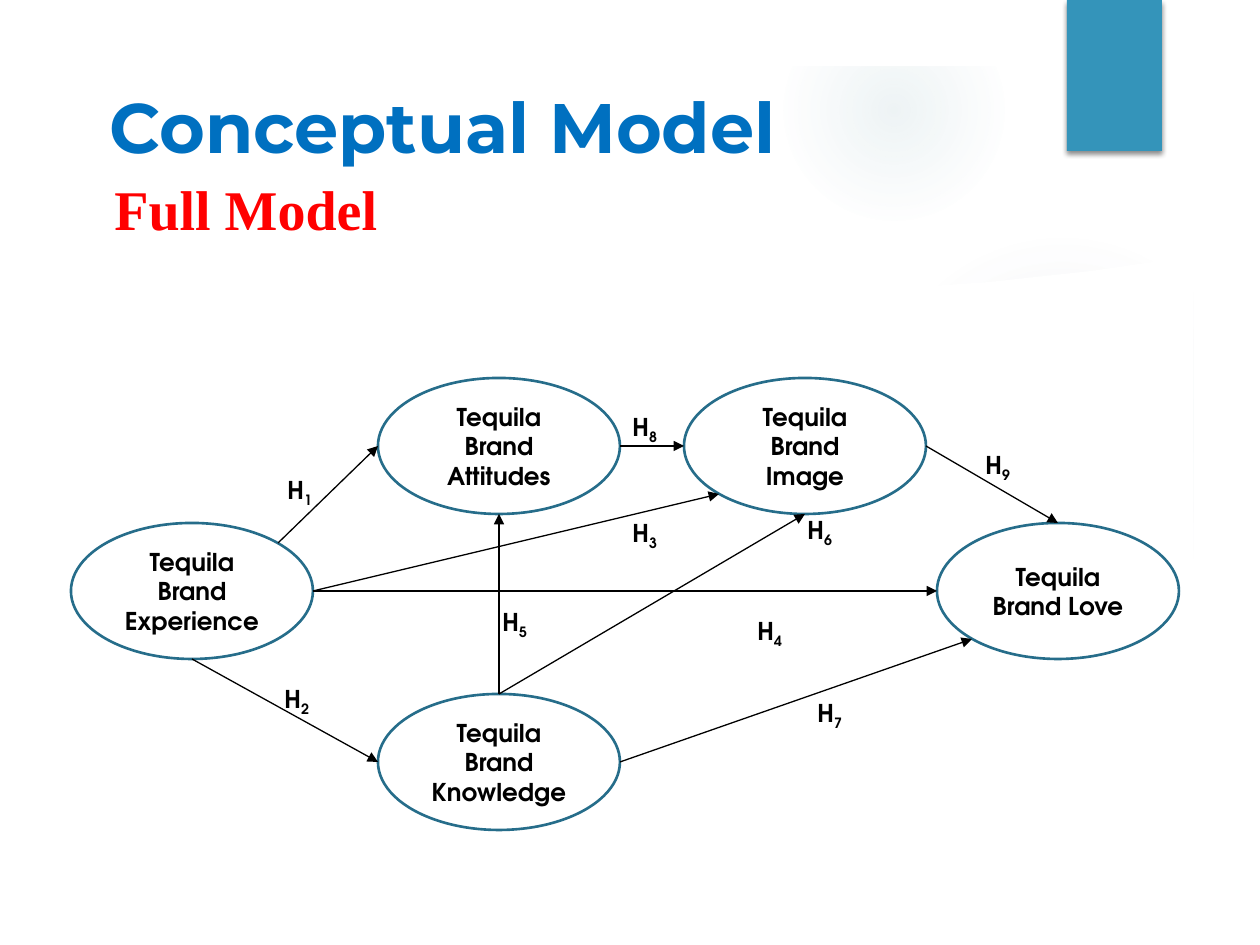
import math

from lxml import etree
from pptx import Presentation
from pptx import util as u
from pptx.dml.color import RGBColor
from pptx.enum import shapes, text
from pptx.oxml import parse_xml
from pptx.oxml.ns import nsdecls, qn

SCALE = 914400 / 126
COLORS = {
    "white": "FFFFFF", "black": "000000", "accent": "3494BA", "outline": "266D8A",
    "glow": "84ACB6", "title": "0070C0", "subtitle": "FF0000",
}
BODY_FONT = "TeX Gyre Adventor"
NODE_SIZE = (242, 136)
LABEL_SIZE = (82, 43)

NODES = {
    "Experience": (71, 523),
    "Love": (937, 523),
    "Image": (684, 378),
    "Attitudes": (378, 378),
    "Knowledge": (378, 694),
}
ANGLES = {"right": 0, "bottom": 90, "bottom left": 135, "left": 180, "top": 270, "top right": 315}

# hypothesis number: start node, start side, end node, end side, label position
PATHS = {
    1: ("Experience", "top right", "Attitudes", "left", (275, 470)),
    2: ("Experience", "bottom", "Knowledge", "left", (272, 679)),
    3: ("Experience", "right", "Image", "bottom left", (620, 513)),
    4: ("Experience", "right", "Love", "left", (745, 611)),
    5: ("Knowledge", "top", "Attitudes", "bottom", (490, 602)),
    6: ("Knowledge", "top", "Image", "bottom", (795, 510)),
    7: ("Knowledge", "right", "Love", "bottom left", (805, 693)),
    8: ("Attitudes", "right", "Image", "left", (620, 407)),
    9: ("Image", "right", "Love", "top", (973, 445)),
}
PANEL_TOP = [(67, 256), (218, 273), (349, 285), (467, 291), (644, 295), (787, 294),
             (887, 289), (989, 282), (1091, 271), (1193, 256)]
PANEL_BOTTOM = [(1193, 881), (67, 881)]


def px(length):
    return u.Emu(round(length * SCALE))


def color(name):
    return RGBColor.from_string(COLORS[name])


def edge_point(node, side):
    """Point of a node's ellipse on the named side."""
    left, top = NODES[node]
    width, height = NODE_SIZE
    angle = math.radians(ANGLES[side])
    return (round(left + width / 2 * (1 + math.cos(angle))),
            round(top + height / 2 * (1 + math.sin(angle))))


class Deck:
    def __init__(self, width, height):
        self.presentation = Presentation()
        self.presentation.slide_width = px(width)
        self.presentation.slide_height = px(height)
        self.slide = self.presentation.slides.add_slide(self.presentation.slide_layouts[6])

    def format_runs(self, paragraph, size, font=BODY_FONT, ink="black"):
        for run in paragraph.runs:
            run.font.size = u.Pt(size)
            run.font.name = font
            run.font.bold = True
            run.font.color.rgb = color(ink)

    def paint(self, shape, fill=None, line=None):
        shape.shadow.inherit = False
        if fill:
            shape.fill.solid()
            shape.fill.fore_color.rgb = color(fill)
        else:
            shape.fill.background()
        if line:
            shape.line.color.rgb = color(line)
            shape.line.width = u.Pt(1.5)
        else:
            shape.line.fill.background()

    def shape(self, kind, left, top, width, height, fill=None, line=None):
        shape = self.slide.shapes.add_shape(kind, px(left), px(top), px(width), px(height))
        self.paint(shape, fill, line)
        return shape

    def glow(self, left, top, size, stops):
        """Circle that fades outwards; stops are (position, opacity) in percent."""
        shape = self.shape(shapes.MSO_SHAPE.OVAL, left, top, size, size)
        stop_xml = "".join(
            f'<a:gs pos="{position * 1000}"><a:srgbClr val="{COLORS["glow"]}">'
            f'<a:alpha val="{opacity * 1000}"/></a:srgbClr></a:gs>'
            for position, opacity in stops)
        gradient = parse_xml(
            f'<a:gradFill {nsdecls("a")} rotWithShape="1"><a:gsLst>{stop_xml}</a:gsLst>'
            '<a:path path="circle"><a:fillToRect l="50000" t="50000" r="50000" b="50000"/>'
            '</a:path></a:gradFill>')
        properties = shape.element.spPr
        properties.replace(properties.find(qn("a:noFill")), gradient)

    def panel(self, points):
        builder = self.slide.shapes.build_freeform(*points[0], scale=SCALE)
        builder.add_line_segments(points[1:], close=True)
        self.paint(builder.convert_to_shape(), "white")

    def tab(self, left, top, width, height):
        """Accent block with a soft shadow below it."""
        shape = self.shape(shapes.MSO_SHAPE.RECTANGLE, left, top, width, height, "accent")
        shape.element.spPr.find(qn("a:effectLst")).append(parse_xml(
            f'<a:outerShdw {nsdecls("a")} blurRad="{u.Pt(3)}" dist="{u.Pt(2)}" dir="5400000" '
            f'rotWithShape="0"><a:srgbClr val="{COLORS["black"]}"><a:alpha val="45000"/>'
            '</a:srgbClr></a:outerShdw>'))

    def node(self, name):
        shape = self.shape(shapes.MSO_SHAPE.OVAL, *NODES[name], *NODE_SIZE, line="outline")
        frame = shape.text_frame
        frame.text = f"Tequila Brand {name}"
        frame.word_wrap = True
        frame.vertical_anchor = text.MSO_ANCHOR.MIDDLE
        frame.paragraphs[0].alignment = text.PP_ALIGN.CENTER
        self.format_runs(frame.paragraphs[0], 14)

    def arrow(self, start, end):
        connector = self.slide.shapes.add_connector(
            shapes.MSO_CONNECTOR.STRAIGHT, *map(px, start + end))
        connector.line.color.rgb = color("black")
        connector.line.width = u.Pt(0.75)
        etree.SubElement(connector.line._get_or_add_ln(), qn("a:tailEnd"), type="triangle")
        etree.SubElement(connector.element.spPr, qn("a:effectLst"))

    def text_box(self, words, left, top, width, height, **style):
        box = self.slide.shapes.add_textbox(px(left), px(top), px(width), px(height))
        frame = box.text_frame
        frame.text = words
        frame.word_wrap = True
        frame.vertical_anchor = text.MSO_ANCHOR.MIDDLE
        self.format_runs(frame.paragraphs[0], **style)
        return frame.paragraphs[0]

    def label(self, number, position):
        paragraph = self.text_box("H", *position, *LABEL_SIZE, size=14)
        subscript = paragraph.add_run()
        subscript.text = str(number)
        self.format_runs(paragraph, 14)
        subscript.font._element.set("baseline", "-25000")


def main():
    deck = Deck(1260, 945)
    deck.glow(868, 231, 388, [(0, 7), (36, 6), (69, 0)])
    deck.glow(784, 0, 220, [(0, 14), (36, 7), (73, 0)])
    deck.panel(PANEL_TOP + PANEL_BOTTOM)
    border = deck.shape(shapes.MSO_SHAPE.FRAME, 0, 0, 1260, 945, "white")
    border.adjustments[0] = 0.07
    deck.tab(1067, 0, 95, 151)

    for name in NODES:
        deck.node(name)
    for number, (start, start_side, end, end_side, position) in PATHS.items():
        deck.arrow(edge_point(start, start_side), edge_point(end, end_side))
        deck.label(number, position)

    deck.text_box("Full Model", 102, 168, 508, 81, size=32, font="Times New Roman", ink="subtitle")
    deck.text_box("Conceptual Model", 97, 77, 874, 98, size=40, font="Montserrat", ink="title")
    deck.presentation.save("out.pptx")


if __name__ == "__main__":
    main()
